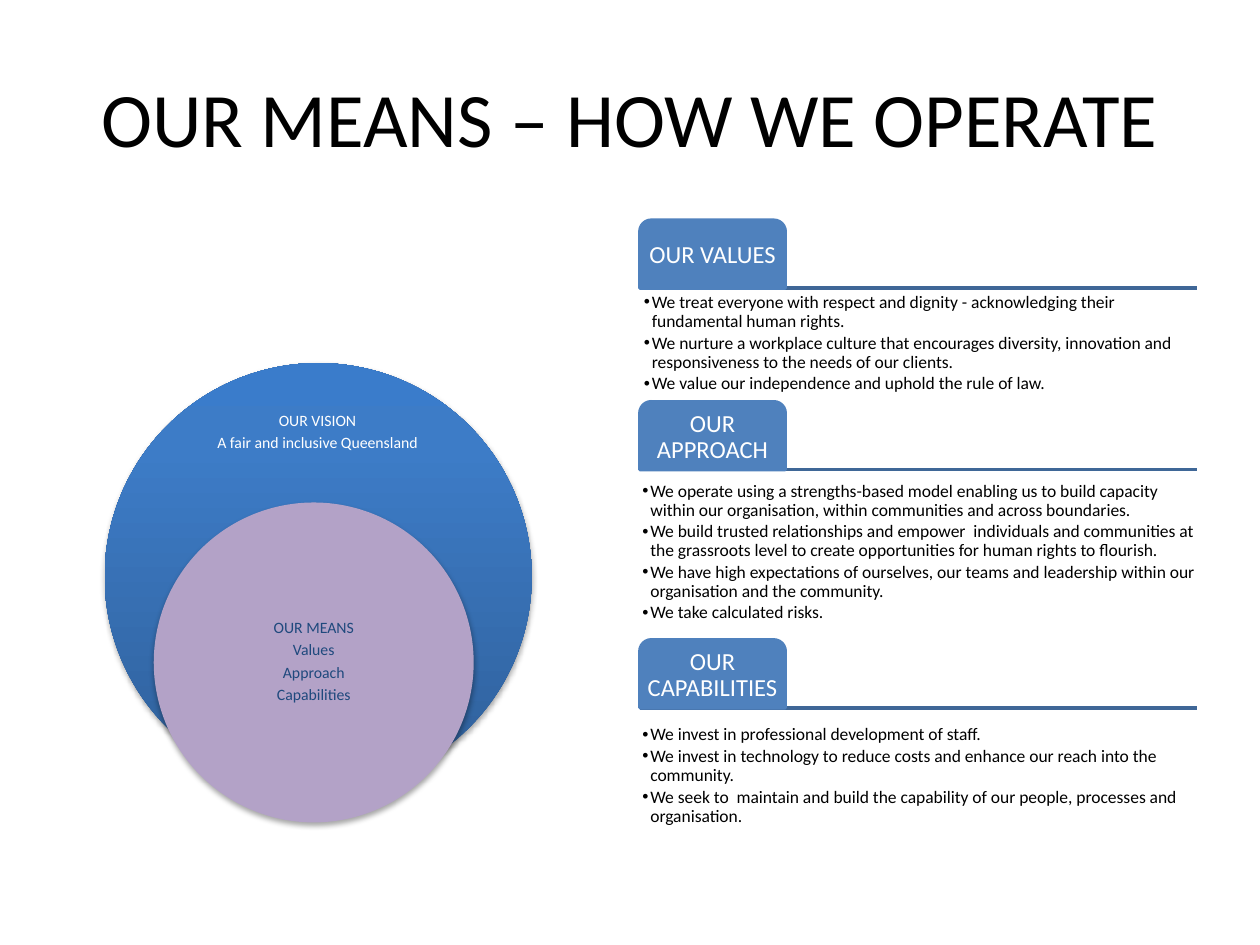
from copy import deepcopy
from dataclasses import dataclass

from lxml import etree
from pptx import Presentation
from pptx.dml.color import RGBColor
from pptx.enum.shapes import MSO_CONNECTOR, MSO_SHAPE
from pptx.enum.text import MSO_ANCHOR, MSO_AUTO_SIZE, PP_ALIGN
from pptx.oxml.ns import qn
from pptx.slide import Slide
from pptx.util import Cm, Pt

BLACK = RGBColor(0x00, 0x00, 0x00)
WHITE = RGBColor(0xFF, 0xFF, 0xFF)
TAB_BLUE = RGBColor(0x4F, 0x81, 0xBD)
RULE_BLUE = RGBColor(0x3F, 0x67, 0x97)
NAVY = RGBColor(0x1F, 0x49, 0x7D)
LILAC = RGBColor(0xB3, 0xA2, 0xC7)
VISION_STOPS = (
    (0, RGBColor(0x2F, 0x5F, 0x99)),
    (0.8, RGBColor(0x3D, 0x7C, 0xC7)),
    (1, RGBColor(0x3A, 0x7C, 0xCB)),
)
CENTER, LEFT = PP_ALIGN.CENTER, PP_ALIGN.LEFT
MIDDLE = MSO_ANCHOR.MIDDLE
NO_AUTOFIT = MSO_AUTO_SIZE.NONE
ELLIPSE = MSO_SHAPE.OVAL
TAB_SHAPE = MSO_SHAPE.ROUND_2_SAME_RECTANGLE
STRAIGHT = MSO_CONNECTOR.STRAIGHT
FONT = "Calibri"
COMPARISON_LAYOUT = 4

SECTION_LEFT, SECTION_RIGHT = 12.9, 24.13
TAB_WIDTH, TAB_HEIGHT = 2.93, 1.37


@dataclass(frozen=True)
class Box:
    left: float
    top: float
    width: float
    height: float

    def lengths(self) -> tuple:
        return Cm(self.left), Cm(self.top), Cm(self.width), Cm(self.height)


@dataclass(frozen=True)
class TextStyle:
    size: float
    color: RGBColor
    inset: float
    space_after: float
    align: PP_ALIGN = CENTER
    bulleted: bool = False


@dataclass(frozen=True)
class Section:
    heading: str
    top: float
    points_box: Box
    points: tuple


@dataclass(frozen=True)
class Circle:
    box: Box
    label_box: Box
    label: tuple
    label_style: TextStyle
    stops: tuple


HEADING_STYLE = TextStyle(14, WHITE, 0.08, 4.9)
POINT_STYLE = TextStyle(10, BLACK, 0.05, 1.5, LEFT, True)

SECTIONS = (
    Section("OUR VALUES", 4.44, Box(12.93, 5.82, 11.15, 2.21), (
        "We treat everyone with respect and dignity - acknowledging their "
        "fundamental human rights.",
        "We nurture a workplace culture that encourages diversity, innovation "
        "and responsiveness to the needs of our clients.",
        "We value our independence and uphold the rule of law.",
    )),
    Section("OUR APPROACH", 8.1, Box(12.9, 9.47, 11.23, 3.33), (
        "We operate using a strengths-based model enabling us to build capacity "
        "within our organisation, within communities and across boundaries.",
        "We build trusted relationships and empower  individuals and communities "
        "at the grassroots level to create opportunities for human rights to flourish.",
        "We have high expectations of ourselves, our teams and leadership within "
        "our organisation and the community.",
        "We take calculated risks.",
    )),
    Section("OUR CAPABILITIES", 12.9, Box(12.9, 14.27, 11.23, 2.74), (
        "We invest in professional development of staff.",
        "We invest in technology to reduce costs and enhance our reach into the "
        "community.",
        "We seek to  maintain and build the capability of our people, processes "
        "and organisation.",
    )),
)

CIRCLES = (
    Circle(Box(2.11, 7.32, 8.61, 8.61), Box(4.14, 7.98, 4.52, 1.47),
           ("OUR VISION", "A fair and inclusive Queensland"),
           TextStyle(9, WHITE, 0.18, 3.15), VISION_STOPS),
    Circle(Box(3.1, 10.13, 6.45, 6.45), Box(4.04, 11.73, 4.57, 3.23),
           ("OUR MEANS", "Values", "Approach", "Capabilities"),
           TextStyle(9, NAVY, 0.18, 3.15), ((0, LILAC),)),
)


def place(shape, box: Box) -> None:
    shape.left, shape.top, shape.width, shape.height = box.lengths()


def write_lines(shape, lines: tuple, style: TextStyle) -> None:
    frame = shape.text_frame
    frame.text = "\n".join(lines)
    frame.word_wrap = True
    frame.auto_size = NO_AUTOFIT
    frame.vertical_anchor = MIDDLE
    frame.margin_left = frame.margin_right = Cm(style.inset)
    frame.margin_top = frame.margin_bottom = Cm(style.inset)
    for paragraph in frame.paragraphs:
        if style.bulleted:
            properties = paragraph._p.get_or_add_pPr()
            properties.set("marL", str(Cm(0.16)))
            properties.set("indent", str(-Cm(0.16)))
            etree.SubElement(properties, qn("a:buChar"), char="•")
        paragraph.alignment = style.align
        paragraph.line_spacing = 0.9
        paragraph.space_before = Pt(0)
        paragraph.space_after = Pt(style.space_after)
        for run in paragraph.runs:
            run.font.name = FONT
            run.font.size = Pt(style.size)
            run.font.bold = False
            run.font.color.rgb = style.color


def add_label(slide: Slide, box: Box, lines: tuple, style: TextStyle) -> None:
    write_lines(slide.shapes.add_textbox(*box.lengths()), lines, style)


def add_section(slide: Slide, section: Section, points) -> None:
    rule_top = Cm(section.top + TAB_HEIGHT)
    rule = slide.shapes.add_connector(
        STRAIGHT, Cm(SECTION_LEFT), rule_top, Cm(SECTION_RIGHT), rule_top)
    rule.line.color.rgb = RULE_BLUE
    rule.line.width = Pt(2)
    etree.SubElement(rule._element.spPr, qn("a:effectLst"))

    tab_box = Box(SECTION_LEFT, section.top, TAB_WIDTH, TAB_HEIGHT)
    tab = slide.shapes.add_shape(TAB_SHAPE, *tab_box.lengths())
    tab.shadow.inherit = False
    tab.adjustments[0] = 0.167
    tab.fill.solid()
    tab.fill.fore_color.rgb = TAB_BLUE
    tab.line.color.rgb = TAB_BLUE
    tab.line.width = Pt(2)

    heading_box = Box(SECTION_LEFT + 0.07, section.top + 0.07, 2.79, 1.3)
    add_label(slide, heading_box, (section.heading,), HEADING_STYLE)
    place(points, section.points_box)
    write_lines(points, section.points, POINT_STYLE)


def add_soft_shadow(shape) -> None:
    shape.shadow.inherit = False
    effects = shape._element.spPr.find(qn("a:effectLst"))
    shadow = etree.SubElement(
        effects, qn("a:outerShdw"), blurRad=str(Pt(3.1)), dist=str(Pt(1.8)),
        dir="5400000", rotWithShape="0")
    color = etree.SubElement(shadow, qn("a:srgbClr"), val=str(BLACK))
    etree.SubElement(color, qn("a:alpha"), val="35000")


def fill_gradient(shape, stops: tuple) -> None:
    shape.fill.gradient()
    shape.fill.gradient_angle = 90
    stop_list = shape._element.spPr.find(qn("a:gradFill")).find(qn("a:gsLst"))
    while len(stop_list) < len(stops):
        stop_list.append(deepcopy(stop_list[0]))
    for stop, (position, color) in zip(shape.fill.gradient_stops, stops):
        stop.position = position
        stop.color.rgb = color


def add_circle(slide: Slide, circle: Circle) -> None:
    disc = slide.shapes.add_shape(ELLIPSE, *circle.box.lengths())
    if len(circle.stops) > 1:
        fill_gradient(disc, circle.stops)
    else:
        disc.fill.solid()
        disc.fill.fore_color.rgb = circle.stops[0][1]
    disc.line.fill.background()
    add_soft_shadow(disc)
    add_label(slide, circle.label_box, circle.label, circle.label_style)


def main() -> None:
    deck = Presentation()
    deck.slide_width, deck.slide_height = Cm(25.4), Cm(19.05)
    slide = deck.slides.add_slide(deck.slide_layouts[COMPARISON_LAYOUT])
    title, *lists, spare = slide.placeholders
    spare._element.getparent().remove(spare._element)
    place(title, Box(1.27, 0.76, 22.86, 3.18))
    title.text_frame.text = "OUR MEANS – HOW WE OPERATE"
    title.text_frame.vertical_anchor = MIDDLE
    heading = title.text_frame.paragraphs[0]
    heading.alignment = CENTER
    heading.runs[0].font.name = FONT
    heading.runs[0].font.size = Pt(44)
    heading.runs[0].font.color.rgb = BLACK
    for section, points in zip(SECTIONS, lists):
        add_section(slide, section, points)
    for circle in CIRCLES:
        add_circle(slide, circle)
    deck.save("out.pptx")


if __name__ == "__main__":
    main()
